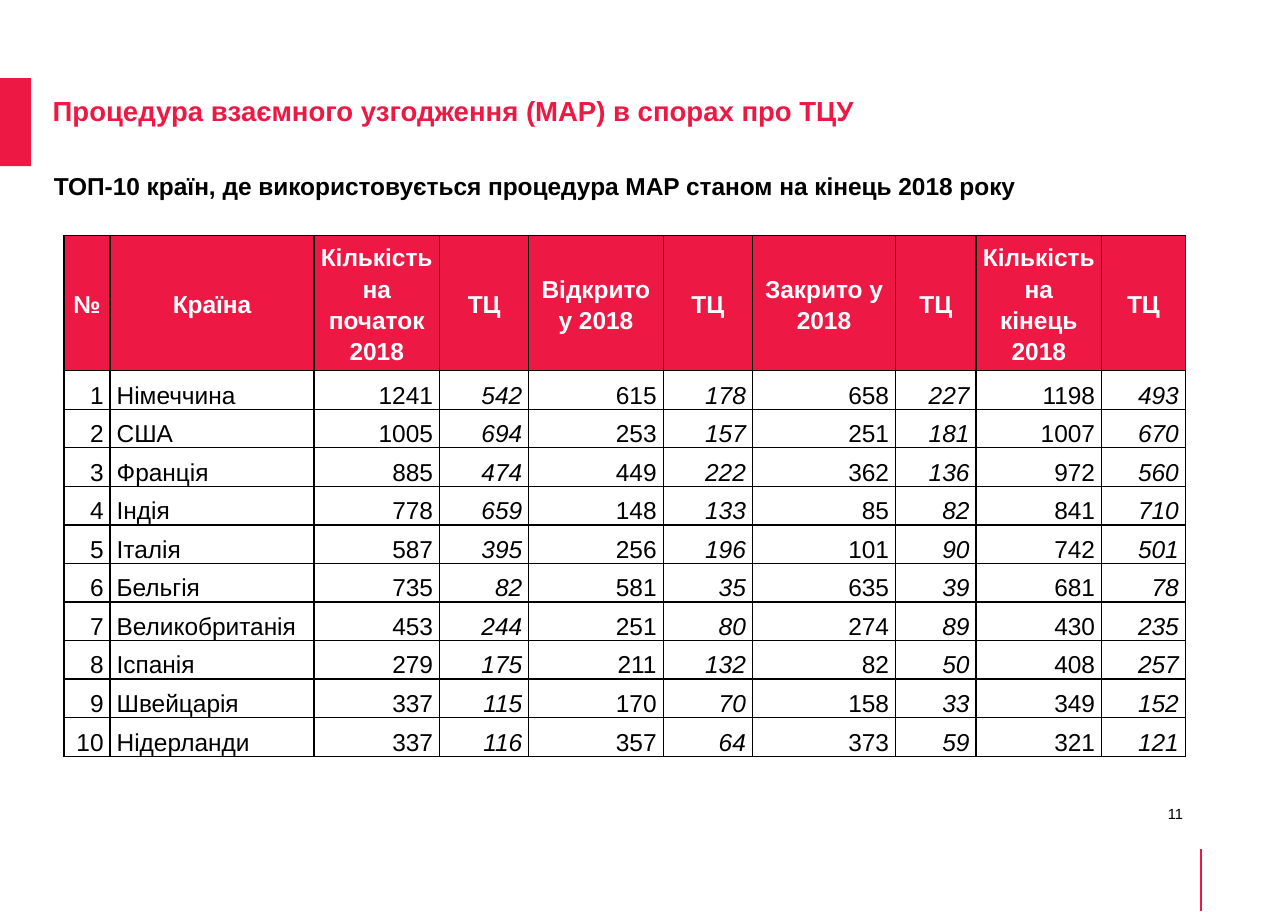
from dataclasses import dataclass

from lxml import etree
from pptx import Presentation
from pptx.dml.color import RGBColor
from pptx.enum.shapes import MSO_CONNECTOR, MSO_SHAPE
from pptx.enum.text import MSO_ANCHOR, PP_ALIGN
from pptx.oxml.ns import qn
from pptx.util import Inches, Pt

LEFT, CENTER, RIGHT, JUSTIFY = PP_ALIGN.LEFT, PP_ALIGN.CENTER, PP_ALIGN.RIGHT, PP_ALIGN.JUSTIFY
MIDDLE, BOTTOM = MSO_ANCHOR.MIDDLE, MSO_ANCHOR.BOTTOM
RECTANGLE, STRAIGHT = MSO_SHAPE.RECTANGLE, MSO_CONNECTOR.STRAIGHT

FONT = "Arial"
COLORS = {"accent": "ED1944", "text": "000000", "header_text": "FFFFFF"}


@dataclass
class Style:
    size: float
    color: str = "text"
    bold: bool = False
    italic: bool = False
    align: PP_ALIGN = LEFT


@dataclass
class Label:
    text: str
    left: float
    top: float
    width: float
    height: float
    style: Style
    inset_x: float = 0.1
    inset_y: float = 0.05


@dataclass
class Column:
    heading: str
    width: float
    align: PP_ALIGN = RIGHT
    italic: bool = False


LABELS = [
    Label("Процедура взаємного узгодження (MAP) в спорах про ТЦУ", 0.38, 0.8, 10.88, 0.71,
          Style(18, "accent", bold=True, align=JUSTIFY)),
    Label("ТОП-10 країн, де використовується процедура MAP станом на кінець 2018 року",
          0.39, 1.5, 10.62, 0.37, Style(16, bold=True, align=JUSTIFY)),
    Label("11", 10.6, 7.31, 0.45, 0.16, Style(9.6), inset_x=0, inset_y=0),
]

COLUMNS = [
    Column("№", 0.42),
    Column("Країна", 1.85, align=LEFT),
    Column("Кількість на початок 2018", 1.14),
    Column("ТЦ", 0.81, italic=True),
    Column("Відкрито у 2018", 1.22),
    Column("ТЦ", 0.81, italic=True),
    Column("Закрито у 2018", 1.3),
    Column("ТЦ", 0.73, italic=True),
    Column("Кількість на кінець 2018", 1.14),
    Column("ТЦ", 0.76, italic=True),
]

COUNTRIES = [
    ("Німеччина", 1241, 542, 615, 178, 658, 227, 1198, 493),
    ("США", 1005, 694, 253, 157, 251, 181, 1007, 670),
    ("Франція", 885, 474, 449, 222, 362, 136, 972, 560),
    ("Індія", 778, 659, 148, 133, 85, 82, 841, 710),
    ("Італія", 587, 395, 256, 196, 101, 90, 742, 501),
    ("Бельгія", 735, 82, 581, 35, 635, 39, 681, 78),
    ("Великобританія", 453, 244, 251, 80, 274, 89, 430, 235),
    ("Іспанія", 279, 175, 211, 132, 82, 50, 408, 257),
    ("Швейцарія", 337, 115, 170, 70, 158, 33, 349, 152),
    ("Нідерланди", 337, 116, 357, 64, 373, 59, 321, 121),
]
HEADER_HEIGHT, ROW_HEIGHT = 1.22, 0.35


def rgb(name: str) -> RGBColor:
    return RGBColor.from_string(COLORS[name])


def write(frame, text: str, style: Style) -> None:
    paragraph = frame.paragraphs[0]
    paragraph.text = text
    paragraph.alignment = style.align
    font = paragraph.font
    font.name, font.size = FONT, Pt(style.size)
    font.bold, font.italic = style.bold, style.italic
    font.color.rgb = rgb(style.color)


def add_label(slide, label: Label) -> None:
    box = slide.shapes.add_textbox(Inches(label.left), Inches(label.top),
                                   Inches(label.width), Inches(label.height))
    frame = box.text_frame
    frame.word_wrap = True
    frame.margin_left = frame.margin_right = Inches(label.inset_x)
    frame.margin_top = frame.margin_bottom = Inches(label.inset_y)
    write(frame, label.text, label.style)


def add_borders(cell) -> None:
    properties = cell._tc.get_or_add_tcPr()
    for side in ("a:lnL", "a:lnR", "a:lnT", "a:lnB"):
        border = etree.SubElement(properties, qn(side), w=str(Pt(1)))
        fill = etree.SubElement(border, qn("a:solidFill"))
        etree.SubElement(fill, qn("a:srgbClr"), val=COLORS["text"])


def fill_cell(cell, text: str, style: Style, anchor: MSO_ANCHOR) -> None:
    cell.vertical_anchor = anchor
    cell.margin_left = cell.margin_right = Inches(0.06)
    cell.margin_top = cell.margin_bottom = 0
    write(cell.text_frame, text, style)
    cell.text_frame.paragraphs[0].line_spacing = 1.15
    add_borders(cell)


def add_country_table(slide) -> None:
    width = sum(column.width for column in COLUMNS)
    height = HEADER_HEIGHT + ROW_HEIGHT * len(COUNTRIES)
    table = slide.shapes.add_table(len(COUNTRIES) + 1, len(COLUMNS), Inches(0.58), Inches(2.14),
                                   Inches(width), Inches(height)).table
    table.horz_banding = table.first_row = False
    for row in table.rows:
        row.height = Inches(ROW_HEIGHT)
    table.rows[0].height = Inches(HEADER_HEIGHT)

    heading_style = Style(16, "header_text", bold=True, align=CENTER)
    for index, column in enumerate(COLUMNS):
        table.columns[index].width = Inches(column.width)
        heading = table.cell(0, index)
        fill_cell(heading, column.heading, heading_style, MIDDLE)
        heading.fill.solid()
        heading.fill.fore_color.rgb = rgb("accent")

    for rank, country in enumerate(COUNTRIES, start=1):
        for index, (column, value) in enumerate(zip(COLUMNS, (rank, *country))):
            cell = table.cell(rank, index)
            fill_cell(cell, str(value), Style(16, italic=column.italic, align=column.align), BOTTOM)
            cell.fill.background()


def add_accents(slide) -> None:
    title_bar = slide.shapes.add_shape(RECTANGLE, 0, Inches(0.71), Inches(0.28), Inches(0.8))
    title_bar.shadow.inherit = False
    title_bar.fill.solid()
    title_bar.fill.fore_color.rgb = rgb("accent")
    title_bar.line.fill.background()

    corner_rule = slide.shapes.add_connector(STRAIGHT, Inches(10.9), Inches(7.71),
                                             Inches(10.9), Inches(8.27))
    corner_rule.line.color.rgb = rgb("accent")
    corner_rule.line.width = Pt(0.75)
    etree.SubElement(corner_rule._element.spPr, qn("a:effectLst"))


def main() -> None:
    presentation = Presentation()
    presentation.slide_width, presentation.slide_height = Inches(11.69), Inches(8.28)
    slide = presentation.slides.add_slide(presentation.slide_layouts[6])

    # Red accents at the edges
    add_accents(slide)

    # Title, subtitle and page number
    for label in LABELS:
        add_label(slide, label)

    # Top ten countries
    add_country_table(slide)

    presentation.save("out.pptx")


if __name__ == "__main__":
    main()
